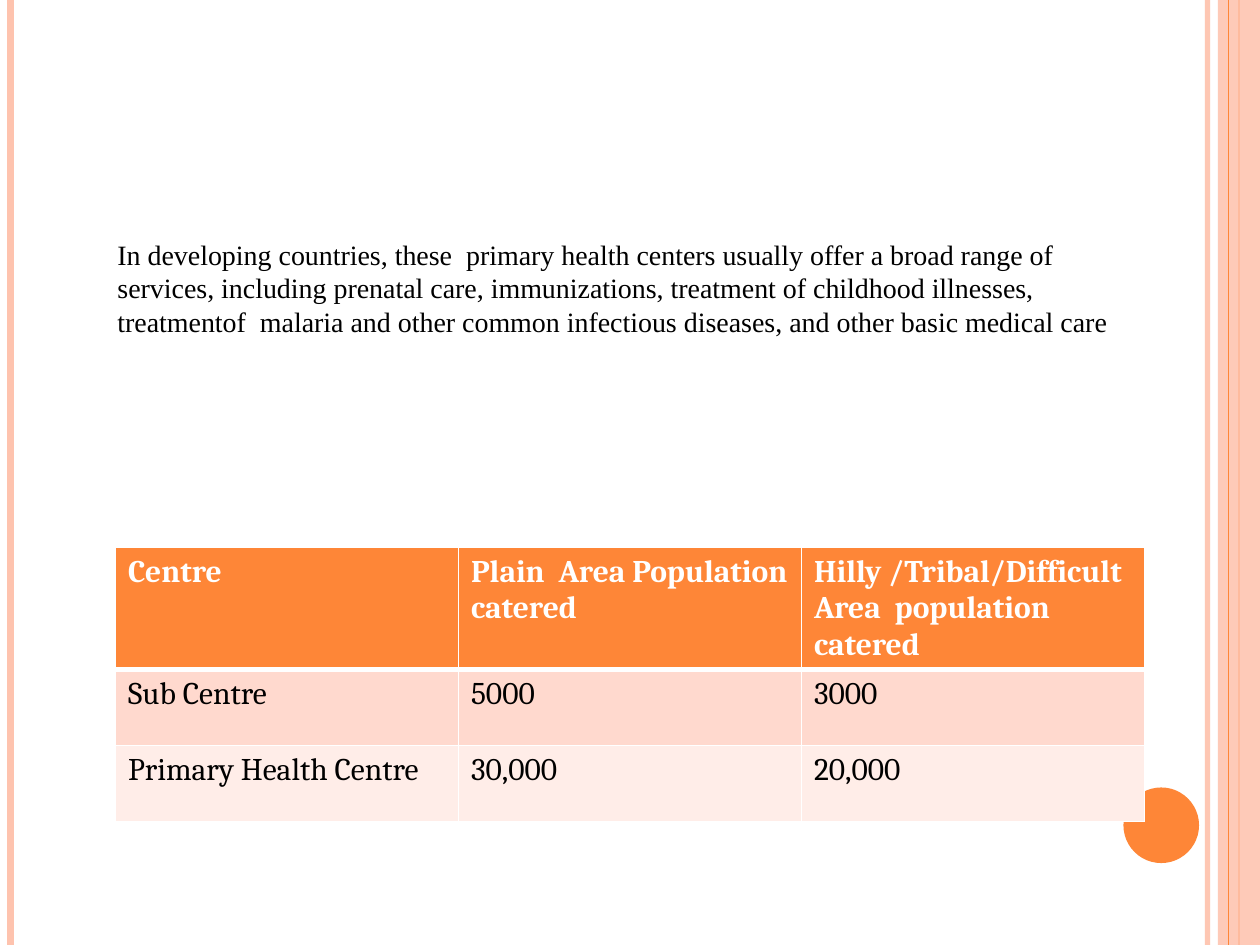
import pptx
import pptx.util
import pptx.dml.color
import pptx.enum.shapes
import pptx.oxml
import pptx.oxml.ns
from lxml import etree

Pt = pptx.util.Pt
RGBColor = pptx.dml.color.RGBColor
qn = pptx.oxml.ns.qn

ORANGE = RGBColor(0xFE, 0x86, 0x37)
PEACH = RGBColor(0xFE, 0xC3, 0xAE)
LIGHT_PEACH = RGBColor(0xFF, 0xD9, 0xCE)
PALE_PEACH = RGBColor(0xFF, 0xED, 0xE8)
WHITE = RGBColor(0xFF, 0xFF, 0xFF)
BLACK = RGBColor(0, 0, 0)


def set_alpha(properties, percent):
    color = properties.find(".//" + qn("a:srgbClr"))
    etree.SubElement(color, qn("a:alpha"), val=str(percent * 1000))


def set_border(cell, side, width):
    properties = cell._tc.get_or_add_tcPr()
    line = etree.SubElement(properties, qn("a:" + side), w=str(Pt(width)))
    fill = etree.SubElement(line, qn("a:solidFill"))
    etree.SubElement(fill, qn("a:srgbClr"), val=str(WHITE))


presentation = pptx.Presentation()
presentation.slide_width = Pt(720)
presentation.slide_height = Pt(540)
slide = presentation.slides.add_slide(presentation.slide_layouts[6])
shapes = slide.shapes

stripes = [
    (690, PEACH, 3, 93),
    (6, PEACH, 4.5, 100),
    (708, ORANGE, 1.5, 100),
    (702, ORANGE, 0.75, 100),
]
for x, color, width, opacity in stripes:
    stripe = shapes.add_connector(
        pptx.enum.shapes.MSO_CONNECTOR.STRAIGHT, Pt(x), 0, Pt(x), Pt(540))
    stripe.line.color.rgb = color
    stripe.line.width = Pt(width)
    etree.SubElement(stripe._element.spPr, qn("a:effectLst"))
    if opacity < 100:
        set_alpha(stripe._element.spPr, opacity)
    if x == 708:
        band = shapes.add_shape(
            pptx.enum.shapes.MSO_SHAPE.RECTANGLE, Pt(696), 0, Pt(24), Pt(540))
        band.fill.solid()
        band.fill.fore_color.rgb = PEACH
        set_alpha(band._element.spPr, 87)
        band.line.fill.background()
        band.shadow.inherit = False

circle = shapes.add_shape(
    pptx.enum.shapes.MSO_SHAPE.OVAL, Pt(642), Pt(450), Pt(43.2), Pt(43.2))
circle.fill.solid()
circle.fill.fore_color.rgb = ORANGE
circle.line.fill.background()
circle.shadow.inherit = False

rows = [
    ["Centre", "Plain  Area Population catered",
     "Hilly /Tribal/Difficult Area  population catered"],
    ["Sub Centre", "5000", "3000"],
    ["Primary Health Centre", "30,000", "20,000"],
]
row_heights = [62, 43.5, 43.5]
row_fills = [ORANGE, LIGHT_PEACH, PALE_PEACH]
table = shapes.add_table(
    3, 3, Pt(66), Pt(313), Pt(588), Pt(sum(row_heights))).table
for column in table.columns:
    column.width = Pt(196)
for row_index, texts in enumerate(rows):
    table.rows[row_index].height = Pt(row_heights[row_index])
    for column_index, text in enumerate(texts):
        cell = table.cell(row_index, column_index)
        set_border(cell, "lnL", 1)
        set_border(cell, "lnR", 1)
        set_border(cell, "lnT", 3 if row_index == 1 else 1)
        set_border(cell, "lnB", 3 if row_index == 0 else 1)
        cell.fill.solid()
        cell.fill.fore_color.rgb = row_fills[row_index]
        cell.text = text
        font = cell.text_frame.paragraphs[0].font
        font.name = "Cambria"
        font.size = Pt(18)
        font.bold = row_index == 0
        font.color.rgb = WHITE if row_index == 0 else BLACK

description = shapes.add_textbox(Pt(60), Pt(132), Pt(588), Pt(65.5))
description.text_frame.word_wrap = True
paragraph = description.text_frame.paragraphs[0]
paragraph.text = (
    "In developing countries, these  primary health centers usually offer "
    "a broad range of services, including prenatal care, immunizations, "
    "treatment of childhood illnesses, treatmentof  malaria and other common "
    "infectious diseases, and other basic medical care")
paragraph.font.name = "Times New Roman"
paragraph.font.size = Pt(16)
paragraph.font.color.rgb = BLACK

presentation.save("out.pptx")
